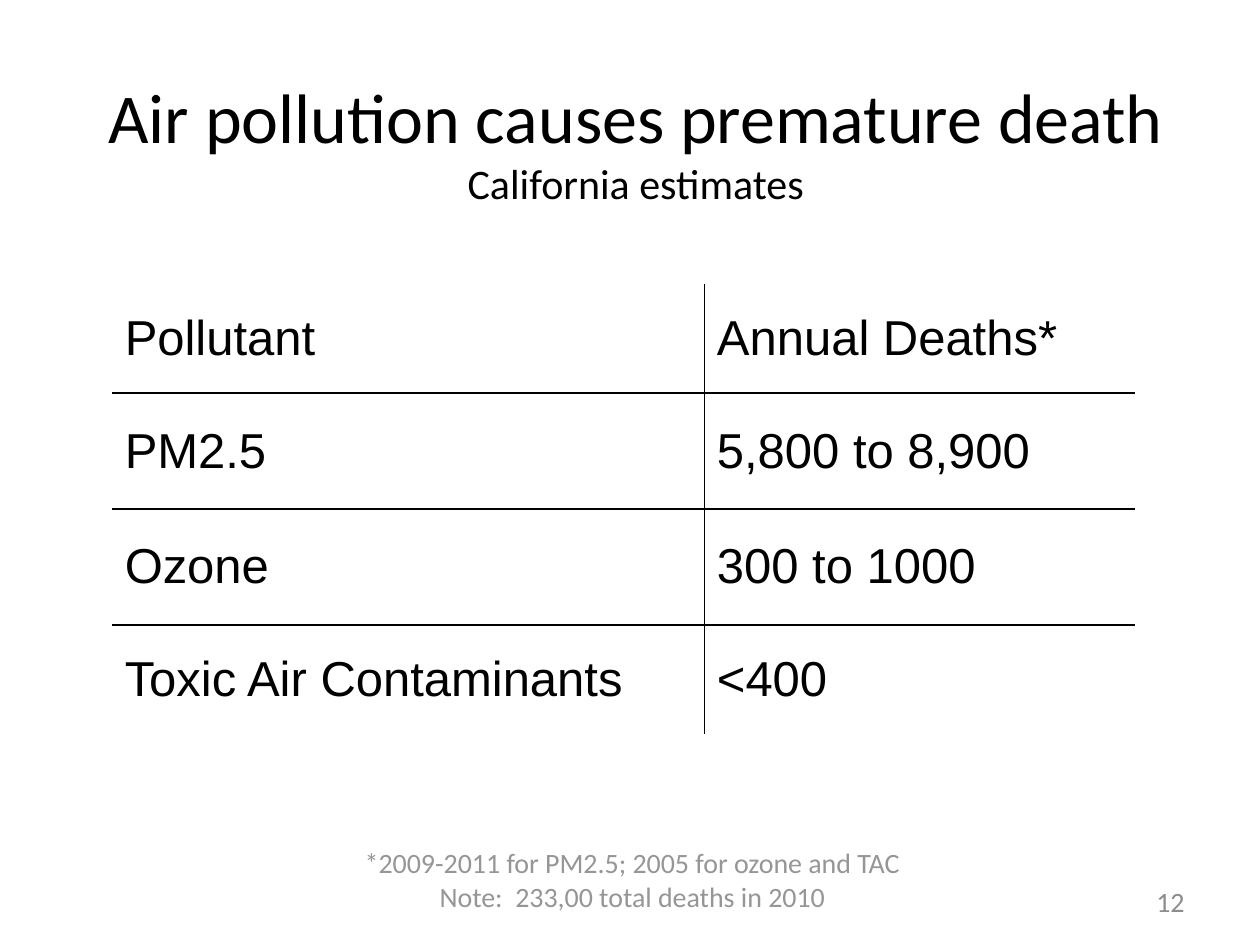
"""Build the slide on premature deaths caused by air pollution in California."""
from dataclasses import dataclass

from lxml import etree
from pptx import Presentation
from pptx import util as u
from pptx.dml.color import RGBColor
from pptx.enum import text
from pptx.oxml import ns

BLACK = RGBColor(0x00, 0x00, 0x00)
NOTE_GRAY = RGBColor(0x96, 0x96, 0x96)
NUMBER_GRAY = RGBColor(0x8C, 0x8C, 0x8C)
PLAIN_TABLE_STYLE = "{2D5ABB26-0587-4C30-8999-92F81FD0307C}"

ROWS = [
    ("Pollutant", "Annual Deaths*"),
    ("PM2.5", "5,800 to 8,900"),
    ("Ozone", "300 to 1000"),
    ("Toxic Air Contaminants", "<400"),
]
COLUMN_WIDTHS = (4.7, 3.42)
ROW_HEIGHTS = (0.87, 0.92, 0.92, 0.87)


@dataclass(frozen=True)
class Label:
    words: str
    left: float
    top: float
    width: float
    height: float
    sizes: tuple[int, ...]
    color: RGBColor
    align: text.PP_ALIGN = text.PP_ALIGN.CENTER
    anchor: text.MSO_ANCHOR = text.MSO_ANCHOR.MIDDLE
    inset: tuple[float, float] = (0.1, 0.05)


LABELS = [
    Label("Air pollution causes premature death\vCalifornia estimates",
          0.42, 0.49, 9.25, 1.26, (40, 24), BLACK),
    Label("*2009-2011 for PM2.5; 2005 for ozone and TAC\n"
          "Note:  233,00 total deaths in 2010",
          1.25, 6.67, 7.54, 0.61, (16,), NOTE_GRAY,
          anchor=text.MSO_ANCHOR.TOP, inset=(0.07, 0.04)),
    Label("12", 7.17, 6.95, 2.33, 0.4, (16,), NUMBER_GRAY,
          align=text.PP_ALIGN.RIGHT),
]


def format_span(span, font: str, size: int, color: RGBColor) -> None:
    """Set the font, size and colour of a run."""
    span.font.name = font
    span.font.size = u.Pt(size)
    span.font.color.rgb = color


def draw_label(page, label: Label) -> None:
    """Add a text box whose runs take the label's sizes in turn."""
    box = page.shapes.add_textbox(u.Inches(label.left), u.Inches(label.top),
                                  u.Inches(label.width), u.Inches(label.height))
    frame = box.text_frame
    frame.word_wrap = True
    frame.vertical_anchor = label.anchor
    frame.margin_left = frame.margin_right = u.Inches(label.inset[0])
    frame.margin_top = frame.margin_bottom = u.Inches(label.inset[1])
    frame.text = label.words
    for para in frame.paragraphs:
        para.alignment = label.align
        for span, size in zip(para.runs, label.sizes):
            format_span(span, "Calibri", size, label.color)


def draw_borders(cell, sides: dict[str, bool]) -> None:
    """Give a cell a thin black line on each side marked true."""
    properties = cell._tc.get_or_add_tcPr()
    for index, (side, visible) in enumerate(sides.items()):
        line = etree.Element(ns.qn(f"a:ln{side}"), w=str(u.Pt(1)))
        if visible:
            fill = etree.SubElement(line, ns.qn("a:solidFill"))
            etree.SubElement(fill, ns.qn("a:srgbClr"), val=str(BLACK))
        else:
            etree.SubElement(line, ns.qn("a:noFill"))
        properties.insert(index, line)


def draw_table(page) -> None:
    """Add the table of deaths with inner grid lines only."""
    last_row, last_column = len(ROWS) - 1, len(COLUMN_WIDTHS) - 1
    table = page.shapes.add_table(
        len(ROWS), len(COLUMN_WIDTHS), u.Inches(0.89), u.Inches(2.25),
        u.Inches(sum(COLUMN_WIDTHS)), u.Inches(sum(ROW_HEIGHTS))).table
    table.first_row = table.horz_banding = False
    table._tbl.tblPr.find(ns.qn("a:tableStyleId")).text = PLAIN_TABLE_STYLE
    for column, width in zip(table.columns, COLUMN_WIDTHS):
        column.width = u.Inches(width)
    for row, height in zip(table.rows, ROW_HEIGHTS):
        row.height = u.Inches(height)
    for r, values in enumerate(ROWS):
        for c, value in enumerate(values):
            cell = table.cell(r, c)
            cell.fill.background()
            cell.vertical_anchor = text.MSO_ANCHOR.MIDDLE
            para = cell.text_frame.paragraphs[0]
            para.text = value
            indent = u.Inches(0.38)
            properties = para._p.get_or_add_pPr()
            properties.set("marL", str(indent))
            properties.set("indent", str(-indent))
            format_span(para.runs[0], "Arial", 28, BLACK)
            draw_borders(cell, {"L": c > 0, "R": c < last_column,
                                "T": r > 0, "B": r < last_row})


def main() -> None:
    """Create and save the deck."""
    deck = Presentation()
    deck.slide_width, deck.slide_height = u.Inches(10), u.Inches(7.5)
    page = deck.slides.add_slide(deck.slide_layouts[6])
    draw_table(page)
    for label in LABELS:
        draw_label(page, label)
    deck.save("out.pptx")


if __name__ == "__main__":
    main()
